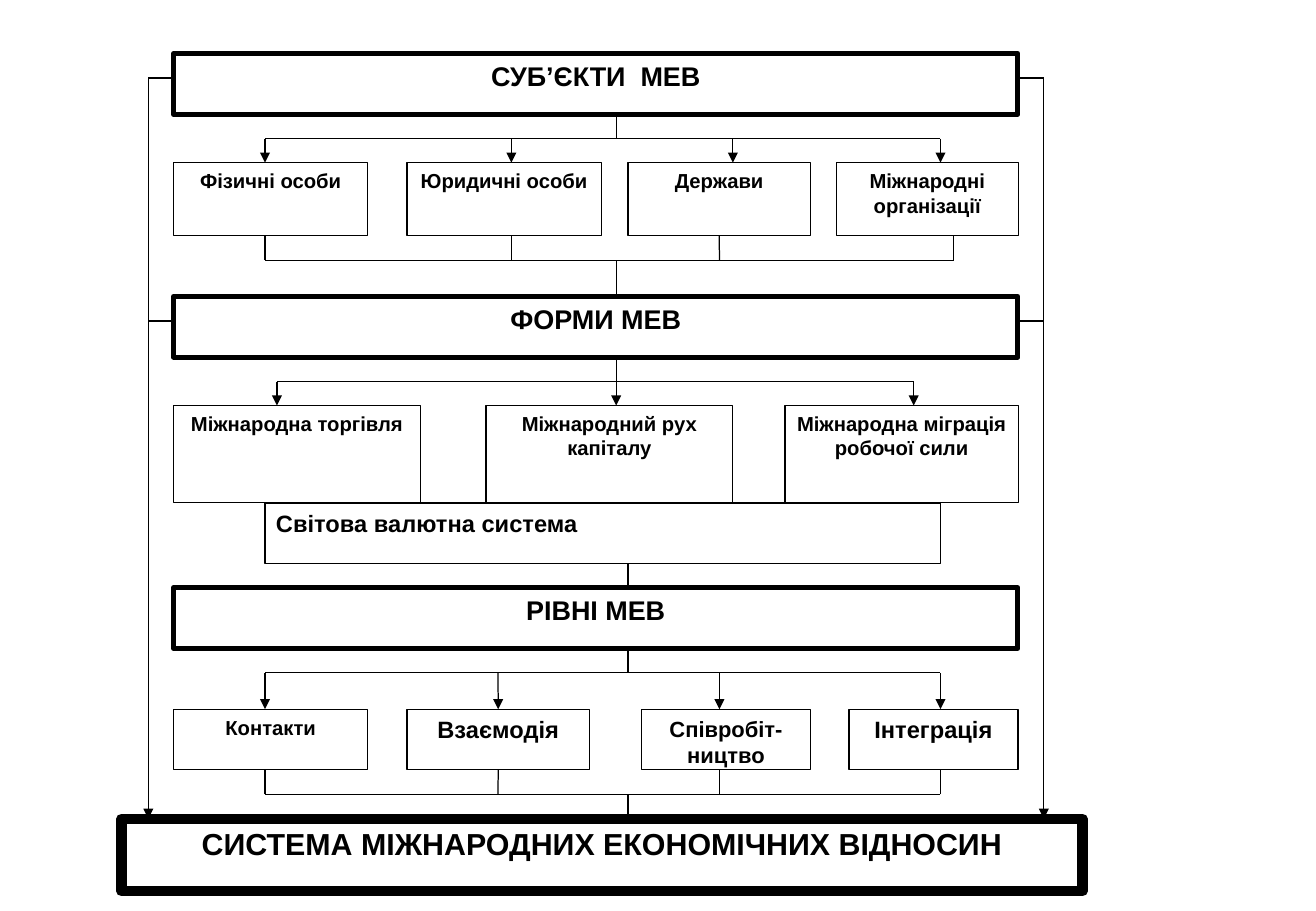
from dataclasses import dataclass

from lxml.etree import SubElement
from pptx import Presentation
from pptx.dml.color import RGBColor
from pptx.enum.shapes import MSO_CONNECTOR, MSO_SHAPE
from pptx.enum.text import MSO_ANCHOR, PP_ALIGN
from pptx.oxml.ns import qn
from pptx.util import Cm, Pt


@dataclass(frozen=True)
class Theme:
    font: str = "Arial"
    ink: RGBColor = RGBColor(0, 0, 0)
    paper: RGBColor = RGBColor(255, 255, 255)
    small: float = 12
    medium: float = 13
    large: float = 14
    heading: float = 16
    result: float = 18
    thin: float = 0.75
    thick: float = 3
    heavy: float = 6


TOP, BOTTOM = 0, 2
LEFT, WIDTH = 3.63, 17.65
RIGHT = LEFT + WIDTH
BAR_HEIGHT = 1.27
RESULT_TOP = 17.12


class Diagram:
    def __init__(self, prs, theme):
        self.theme = theme
        self.slide = prs.slides.add_slide(prs.slide_layouts[6])

    def box(self, text, x, y, w, h, size=None, line=None, align=PP_ALIGN.CENTER):
        t = self.theme
        sp = self.slide.shapes.add_shape(MSO_SHAPE.RECTANGLE, Cm(x), Cm(y), Cm(w), Cm(h))
        sp.shadow.inherit = False
        sp.fill.solid()
        sp.fill.fore_color.rgb = t.paper
        sp.line.color.rgb = t.ink
        sp.line.width = Pt(line or t.thin)
        tf = sp.text_frame
        tf.word_wrap = True
        tf.vertical_anchor = MSO_ANCHOR.TOP
        tf.margin_left = tf.margin_right = Cm(0.23)
        p = tf.paragraphs[0]
        p.text = text
        p.alignment = align
        p.font.name = t.font
        p.font.size = Pt(size or t.small)
        p.font.bold = True
        p.font.color.rgb = t.ink
        return sp

    def heading(self, text, y):
        t = self.theme
        return self.box(text, LEFT, y, WIDTH, BAR_HEIGHT, t.heading, t.thick)

    def row(self, y, h, items):
        """Draw boxes given as (text, left, width, type size)."""
        return [self.box(text, x, y, w, h, size) for text, x, w, size in items]

    def line(self, x1, y1, x2, y2, arrow=False):
        cxn = self.slide.shapes.add_connector(
            MSO_CONNECTOR.STRAIGHT, Cm(x1), Cm(y1), Cm(x2), Cm(y2))
        cxn.line.color.rgb = self.theme.ink
        cxn.line.width = Pt(self.theme.thin)
        if arrow:
            SubElement(cxn.line._get_or_add_ln(), qn("a:tailEnd"), type="triangle")
        SubElement(cxn._element.spPr, qn("a:effectLst"))
        return cxn

    def comb(self, boxes, side, xs, bar_y, stem_x, stem_y):
        """Join a stem to one side of each box through a bar; arrows enter tops."""
        self.line(stem_x, stem_y, stem_x, bar_y)
        self.line(xs[0], bar_y, xs[-1], bar_y)
        for sp, x in zip(boxes, xs):
            edge = sp.top if side == TOP else sp.top + sp.height
            cxn = self.line(x, bar_y, x, edge.cm if side == TOP else edge / Cm(1),
                            arrow=side == TOP)
            if abs(sp.left + sp.width / 2 - Cm(x)) < Cm(0.02):
                cxn.end_connect(sp, side)


def main():
    prs = Presentation()
    prs.slide_width, prs.slide_height = Cm(27.51), Cm(19.05)
    t = Theme()
    d = Diagram(prs, t)

    d.heading("СУБ’ЄКТИ  МЕВ", 1.12)
    subjects = d.row(3.4, 1.52, [
        ("Фізичні особи", LEFT, 4.06, t.small),
        ("Юридичні особи", 8.51, 4.06, t.small),
        ("Держави", 13.13, 3.81, t.small),
        ("Міжнародні організації", 17.48, 3.81, t.small),
    ])
    d.comb(subjects, TOP, [5.54, 10.69, 15.32, 19.66], 2.9, 12.88, 2.39)
    d.comb(subjects, BOTTOM, [5.54, 10.69, 15.04, 19.94], 5.44, 12.88, 6.2)

    d.heading("ФОРМИ МЕВ", 6.2)
    forms = d.row(8.48, 2.03, [
        ("Міжнародна торгівля", LEFT, 5.16, t.small),
        ("Міжнародний рух капіталу", 10.16, 5.16, t.small),
        ("Міжнародна міграція робочої сили", 16.41, 4.88, t.small),
    ])
    d.comb(forms, TOP, [5.79, 12.88, 19.1], 7.98, 12.88, 7.47)
    d.box("Світова валютна система", 5.54, 10.52, 14.12, BAR_HEIGHT, t.large,
          align=PP_ALIGN.JUSTIFY)
    d.line(13.13, 11.79, 13.13, 12.29)

    d.heading("РІВНІ МЕВ", 12.29)
    levels = d.row(14.83, 1.27, [
        ("Контакти", LEFT, 4.06, t.small),
        ("Взаємодія", 8.51, 3.81, t.large),
        ("Співробіт-ництво", 13.41, 3.53, t.medium),
        ("Інтеграція", 17.75, 3.53, t.large),
    ])
    level_xs = [5.54, 10.41, 15.04, 19.66]
    d.comb(levels, TOP, level_xs, 14.07, 13.13, 13.56)
    d.comb(levels, BOTTOM, level_xs, 16.61, 13.13, RESULT_TOP)

    d.box("СИСТЕМА МІЖНАРОДНИХ ЕКОНОМІЧНИХ ВІДНОСИН", 2.54, RESULT_TOP, 20.09, 1.52,
          t.result, t.heavy)
    for edge, rail in ((LEFT, 3.1), (RIGHT, 21.82)):
        for y in (1.63, 6.71):
            d.line(edge, y, rail, y)
        d.line(rail, 1.63, rail, RESULT_TOP, arrow=True)

    prs.save("out.pptx")


if __name__ == "__main__":
    main()
